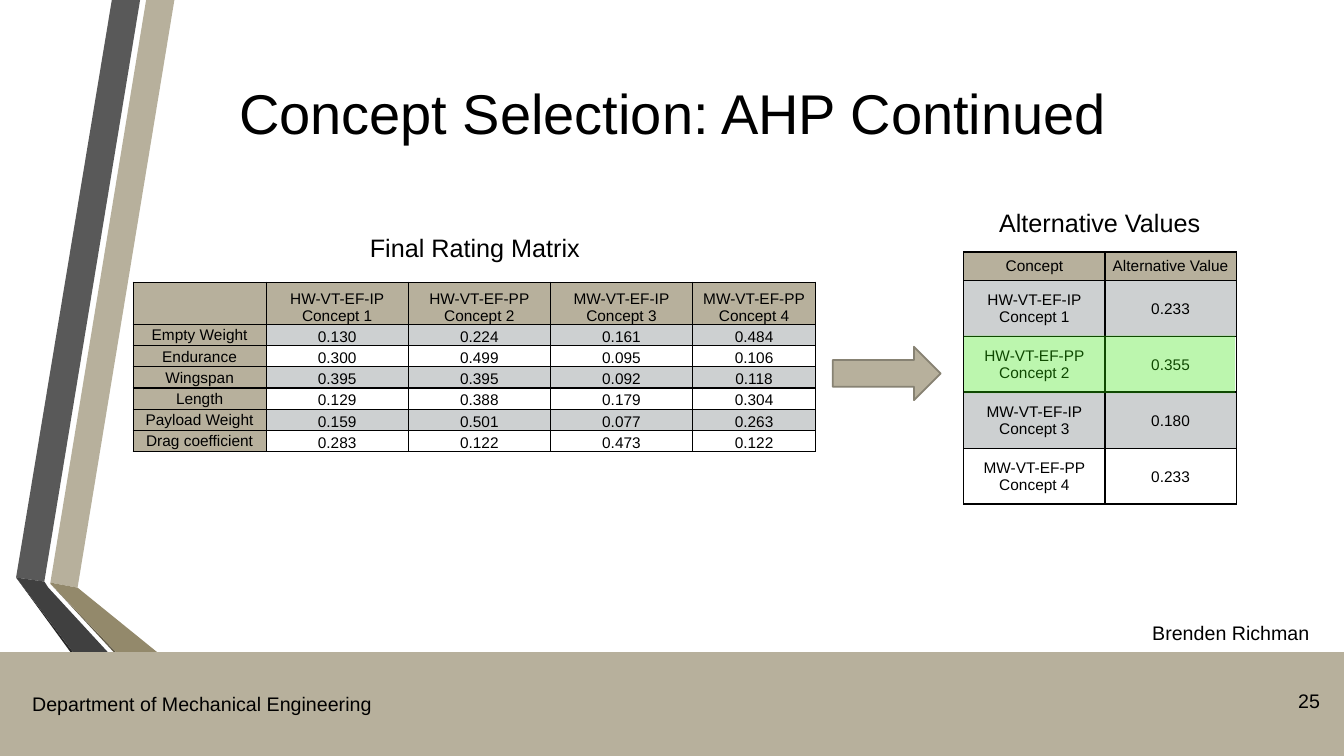
from dataclasses import dataclass

from lxml import etree
from pptx import Presentation
from pptx import util as u
from pptx.dml.color import RGBColor
from pptx.enum import shapes, text
from pptx.oxml import ns

PX = 9144  # EMU in one px, 100 px to the inch
FONT = "Arial"
BLACK = RGBColor(0x00, 0x00, 0x00)
WHITE = RGBColor(0xFF, 0xFF, 0xFF)
TAN = RGBColor(0xB7, 0xB0, 0x9C)
GREY = RGBColor(0xCD, 0xD0, 0xD1)
EDGE = RGBColor(0x87, 0x82, 0x73)
GREEN = RGBColor(0x2F, 0xE6, 0x04)
SLATE = RGBColor(0x59, 0x59, 0x59)
COAL = RGBColor(0x40, 0x40, 0x40)
INK = RGBColor(0x26, 0x26, 0x26)
OLIVE = RGBColor(0x93, 0x89, 0x6B)
MOSS = RGBColor(0x62, 0x5B, 0x47)
LEFT, MID, RIGHT = text.PP_ALIGN.LEFT, text.PP_ALIGN.CENTER, text.PP_ALIGN.RIGHT
CENTRE, BOTTOM = text.MSO_ANCHOR.MIDDLE, text.MSO_ANCHOR.BOTTOM

Box = tuple[int, int, int, int]


@dataclass
class Band:
    fill: RGBColor
    points: list[tuple[int, int]]


@dataclass
class Label:
    words: str
    box: Box
    size: int
    align: text.PP_ALIGN = LEFT
    wrap: bool = True
    lead: float = 1.0


@dataclass
class Grid:
    left: int
    top: int
    cols: list[int]
    rows: list[int]
    cells: list[list[str]]
    anchor: text.MSO_ANCHOR
    stub: bool  # the first column is coloured like the header


BANDS = [
    Band(TAN, [(50, 578), (77, 583), (173, 0), (145, 0)]),
    Band(SLATE, [(139, 0), (111, 0), (16, 573), (44, 577)]),
    Band(INK, [(16, 573), (145, 750), (151, 750)]),
    Band(MOSS, [(50, 579), (208, 750), (214, 750)]),
    Band(OLIVE, [(50, 579), (214, 750), (283, 750), (77, 583), (50, 578)]),
    Band(COAL, [(202, 750), (48, 583), (44, 577), (16, 573), (151, 750)]),
]

LABELS = [
    Label("Department of Mechanical Engineering", (22, 682, 359, 34), 14, wrap=False),
    Label("25", (1242, 679, 77, 40), 14, RIGHT),
    Label("Final Rating Matrix", (317, 226, 308, 42), 18, MID),
    Label("Alternative Values", (981, 201, 261, 40), 18),
    Label("Brenden Richman", (1133, 614, 200, 34), 14, lead=0.9),
]

CODES = ["HW-VT-EF-IP", "HW-VT-EF-PP", "MW-VT-EF-IP", "MW-VT-EF-PP"]
NAMES = [f"Concept {i}" for i in range(1, 5)]

RATINGS = Grid(
    132, 280, [132, 141, 141, 141, 122], [42] + [21] * 6,
    [
        ["", *(f"{code}\n{name}" for code, name in zip(CODES, NAMES))],
        ["Empty Weight", "0.130", "0.224", "0.161", "0.484"],
        ["Endurance", "0.300", "0.499", "0.095", "0.106"],
        ["Wingspan", "0.395", "0.395", "0.092", "0.118"],
        ["Length", "0.129", "0.388", "0.179", "0.304"],
        ["Payload Weight", "0.159", "0.501", "0.077", "0.263"],
        ["Drag coefficient", "0.283", "0.122", "0.473", "0.122"],
    ],
    BOTTOM, True,
)
SCORES = ["0.233", "0.355", "0.180", "0.233"]
VALUES = Grid(
    956, 250, [140, 130], [28, 56, 55, 56, 55],
    [["Concept", "Alternative Value"]]
    + [[f"{code}\v{name}", score] for code, name, score in zip(CODES, NAMES, SCORES)],
    CENTRE, False,
)


def emu(box: Box) -> list[int]:
    return [n * PX for n in box]


def style(frame, size: int, align: text.PP_ALIGN) -> None:
    for para in frame.paragraphs:
        para.alignment = align
        for run in para.runs:
            run.font.name = FONT
            run.font.size = u.Pt(size)
            run.font.color.rgb = BLACK


def paint(shape, fill: RGBColor) -> None:
    shape.shadow.inherit = False
    shape.fill.solid()
    shape.fill.fore_color.rgb = fill
    shape.line.fill.background()


def add_block(slide, kind: shapes.MSO_SHAPE, box: Box, fill: RGBColor):
    shape = slide.shapes.add_shape(kind, *emu(box))
    paint(shape, fill)
    return shape


def add_band(slide, band: Band) -> None:
    start, *rest = band.points
    path = slide.shapes.build_freeform(*start, scale=PX)
    path.add_line_segments(rest, close=True)
    paint(path.convert_to_shape(), band.fill)


def add_label(slide, label: Label) -> None:
    frame = slide.shapes.add_textbox(*emu(label.box)).text_frame
    frame.word_wrap = label.wrap
    frame.text = label.words
    frame.paragraphs[0].line_spacing = label.lead
    style(frame, label.size, label.align)


def add_border(cell) -> None:
    props = cell._tc.get_or_add_tcPr()
    for i, side in enumerate("LRTB"):
        line = etree.Element(ns.qn(f"a:ln{side}"), w=str(u.Pt(1)))
        fill = etree.SubElement(line, ns.qn("a:solidFill"))
        etree.SubElement(fill, ns.qn("a:srgbClr"), val=str(BLACK))
        props.insert(i, line)


def add_grid(slide, grid: Grid) -> None:
    box = (grid.left, grid.top, sum(grid.cols), sum(grid.rows))
    table = slide.shapes.add_table(len(grid.rows), len(grid.cols), *emu(box)).table
    for col, width in zip(table.columns, grid.cols):
        col.width = width * PX
    for row, height in zip(table.rows, grid.rows):
        row.height = height * PX
    for r, line in enumerate(grid.cells):
        for c, words in enumerate(line):
            cell = table.cell(r, c)
            stub = grid.stub and c == 0
            cell.margin_left = cell.margin_right = cell.margin_top = PX
            cell.margin_bottom = 0
            cell.vertical_anchor = CENTRE if stub else grid.anchor
            cell.fill.solid()
            shade = GREY if r % 2 else WHITE
            cell.fill.fore_color.rgb = TAN if r == 0 or stub else shade
            add_border(cell)
            cell.text_frame.text = words
            style(cell.text_frame, 11, MID)


def set_title(slide) -> None:
    title = slide.shapes.title
    title.left, title.top, title.width, title.height = emu((119, 0, 1096, 192))
    frame = title.text_frame
    frame.text = "Concept Selection: AHP Continued"
    frame.auto_size = text.MSO_AUTO_SIZE.NONE
    frame.vertical_anchor = text.MSO_ANCHOR.TOP
    frame.margin_top = 78 * PX
    style(frame, 40, MID)


def main() -> None:
    deck = Presentation()
    deck.slide_width, deck.slide_height = 1333 * PX, 750 * PX
    slide = deck.slides.add_slide(deck.slide_layouts[5])

    # Side bands and footer bar
    for band in BANDS:
        add_band(slide, band)
    add_block(slide, shapes.MSO_SHAPE.RECTANGLE, (0, 647, 1333, 103), TAN)

    # Title, tables and labels
    set_title(slide)
    add_grid(slide, RATINGS)
    add_grid(slide, VALUES)
    for label in LABELS:
        add_label(slide, label)

    # Arrow between the tables
    arrow = add_block(slide, shapes.MSO_SHAPE.RIGHT_ARROW, (826, 344, 107, 53), TAN)
    arrow.line.color.rgb = EDGE
    arrow.line.width = u.Pt(1.25)

    # Clear green mark on the best concept
    mark = add_block(slide, shapes.MSO_SHAPE.RECTANGLE, (956, 333, 269, 57), GREEN)
    tint = mark._element.spPr.find(f".//{ns.qn('a:srgbClr')}")
    etree.SubElement(tint, ns.qn("a:alpha"), val="32000")

    deck.save("out.pptx")


if __name__ == "__main__":
    main()
